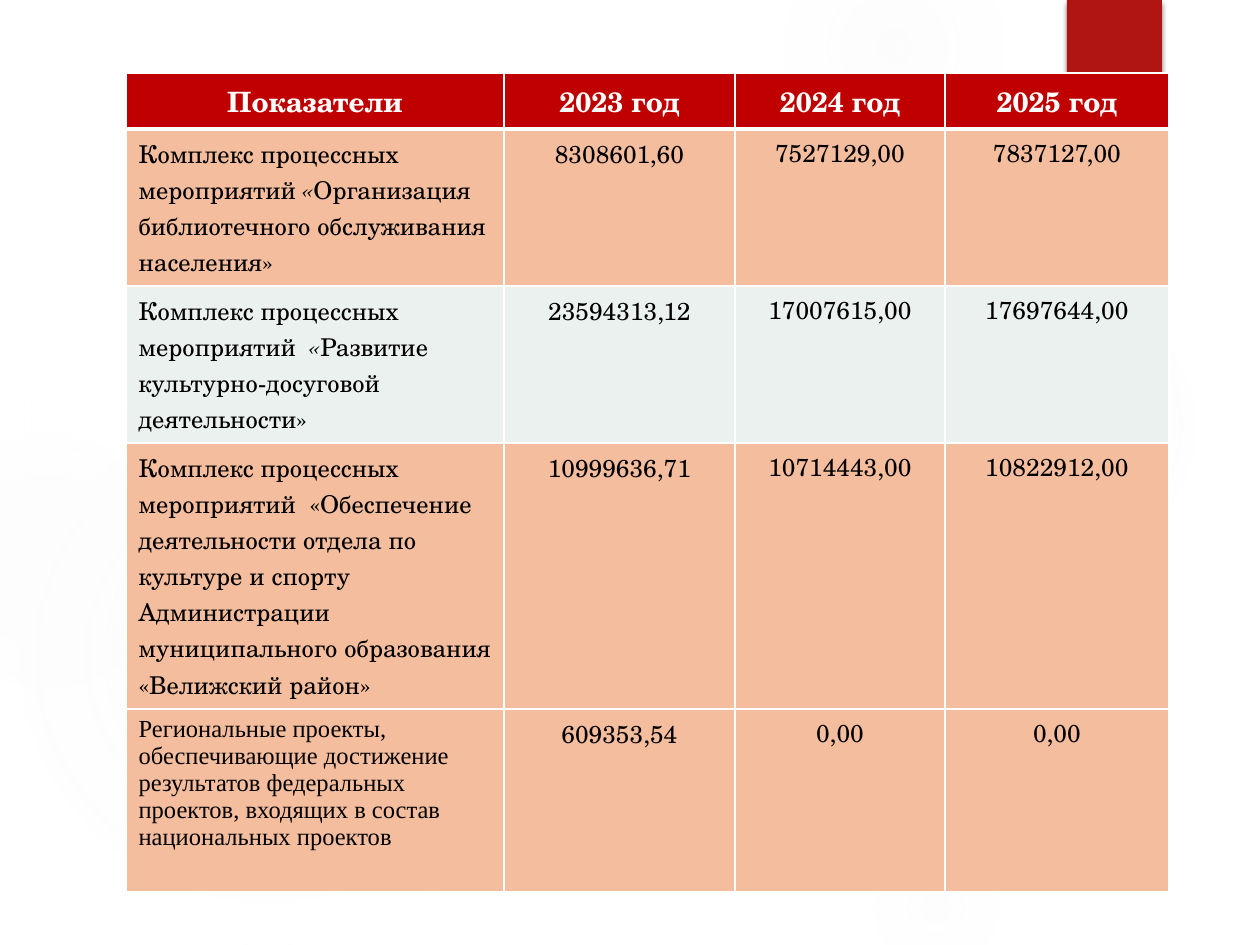
from lxml import etree
from pptx import Presentation
from pptx.dml.color import RGBColor
from pptx.enum.shapes import MSO_SHAPE
from pptx.enum.text import PP_ALIGN
from pptx.oxml import parse_xml
from pptx.oxml.ns import nsdecls, qn
from pptx.util import Pt

RECTANGLE, OVAL = MSO_SHAPE.RECTANGLE, MSO_SHAPE.OVAL
LEFT, CENTER = PP_ALIGN.LEFT, PP_ALIGN.CENTER

WHITE = RGBColor(0xFF, 0xFF, 0xFF)
BLACK = RGBColor(0x00, 0x00, 0x00)
GLOW = RGBColor(0xF3, 0xF3, 0xF3)
TAB_RED = RGBColor(0xB0, 0x15, 0x13)
HEADER_RED = RGBColor(0xC0, 0x00, 0x00)
PEACH = RGBColor(0xF4, 0xBD, 0x9E)
MINT = RGBColor(0xEB, 0xF1, 0xEE)

SCHOLA, TIMES = "TeX Gyre Schola", "Times New Roman"
PX_PER_INCH = 126

# Box (left, top, diameter) and gradient stops (position %, opacity %)
GLOWS = [
    ((868, 231, 388), [(0, 7), (36, 6), (69, 0)]),
    ((784, -63, 220), [(0, 14), (36, 7), (73, 0)]),
    ((868, 840, 136), [(0, 9), (36, 5), (66, 0)]),
    ((-21, 368, 577), [(0, 11), (36, 10), (75, 0)]),
    ((-116, 399, 325), [(0, 8), (36, 8), (72, 0)]),
]

COLUMN_WIDTHS = [378, 231, 210, 224]
ROW_HEIGHTS = [56, 157, 157, 266, 183]
HEADERS = ["Показатели", "2023 год", "2024 год", "2025 год"]
# Label runs (text, italic), label font, fill, amounts by year
ROWS = [
    ([("Комплекс процессных мероприятий", False), (" «", True),
      ("Организация библиотечного обслуживания населения»", False)],
     SCHOLA, PEACH, ["8308601,60", "7527129,00", "7837127,00"]),
    ([("Комплекс процессных мероприятий ", False), (" «", True),
      ("Развитие культурно-досуговой деятельности»", False)],
     SCHOLA, MINT, ["23594313,12", "17007615,00", "17697644,00"]),
    ([("Комплекс процессных мероприятий  «Обеспечение деятельности отдела "
       "по культуре и спорту Администрации муниципального образования "
       "«Велижский район»", False)],
     SCHOLA, PEACH, ["10999636,71", "10714443,00", "10822912,00"]),
    ([("Региональные проекты, обеспечивающие достижение результатов "
       "федеральных проектов, входящих в состав национальных проектов", False)],
     TIMES, PEACH, ["609353,54", "0,00", "0,00"]),
]


def px(length):
    return round(length * 914400 / PX_PER_INCH)


def add_plain_shape(slide, kind, left, top, width, height):
    shape = slide.shapes.add_shape(kind, px(left), px(top), px(width), px(height))
    shape.shadow.inherit = False
    shape.line.fill.background()
    return shape


def add_glow(slide, box, stops):
    """Circle that fades out from its centre."""
    left, top, diameter = box
    shape = add_plain_shape(slide, OVAL, left, top, diameter, diameter)
    stops_xml = "".join(
        f'<a:gs pos="{position * 1000}"><a:srgbClr val="{GLOW}">'
        f'<a:alpha val="{opacity * 1000}"/></a:srgbClr></a:gs>'
        for position, opacity in stops)
    gradient = parse_xml(
        f'<a:gradFill {nsdecls("a")}><a:gsLst>{stops_xml}</a:gsLst>'
        '<a:path path="circle"><a:fillToRect l="50000" t="50000" r="50000" '
        'b="50000"/></a:path></a:gradFill>')
    shape.element.spPr.find(qn("a:prstGeom")).addnext(gradient)


def add_red_tab(slide, left, top, width, height):
    shape = add_plain_shape(slide, RECTANGLE, left, top, width, height)
    shape.fill.solid()
    shape.fill.fore_color.rgb = TAB_RED
    effects = shape.element.spPr.find(qn("a:effectLst"))
    effects.append(parse_xml(
        f'<a:outerShdw {nsdecls("a")} blurRad="{Pt(3)}" dist="{Pt(2)}" '
        'dir="5400000" rotWithShape="0"><a:srgbClr val="000000">'
        '<a:alpha val="45000"/></a:srgbClr></a:outerShdw>'))


def set_borders(cell, bottom_width):
    properties = cell._tc.get_or_add_tcPr()
    widths = {"lnL": 1, "lnR": 1, "lnT": 1, "lnB": bottom_width}
    for index, (side, width) in enumerate(widths.items()):
        line = etree.Element(qn(f"a:{side}"), w=str(Pt(width)))
        fill = etree.SubElement(line, qn("a:solidFill"))
        etree.SubElement(fill, qn("a:srgbClr"), val=str(WHITE))
        properties.insert(index, line)


def fill_cell(cell, runs, fill, font=SCHOLA, align=CENTER, header=False):
    cell.fill.solid()
    cell.fill.fore_color.rgb = fill
    set_borders(cell, 3 if header else 1)
    paragraph = cell.text_frame.paragraphs[0]
    paragraph.alignment = align
    paragraph.font.name = font
    paragraph.font.size = Pt(16 if header else 14)
    paragraph.font.bold = header
    paragraph.font.color.rgb = WHITE if header else BLACK
    for text, italic in runs:
        run = paragraph.add_run()
        run.text = text
        if italic:
            run.font.italic = True


def tighten_cell(cell):
    """No margins and wider line spacing, as in the last two year columns."""
    cell.margin_left = cell.margin_right = 0
    cell.margin_top = cell.margin_bottom = 0
    cell.text_frame.paragraphs[0].line_spacing = 1.15


def add_budget_table(slide, left, top):
    table = slide.shapes.add_table(
        len(ROW_HEIGHTS), len(COLUMN_WIDTHS), px(left), px(top),
        px(sum(COLUMN_WIDTHS)), px(sum(ROW_HEIGHTS))).table
    for column, width in zip(table.columns, COLUMN_WIDTHS):
        column.width = px(width)
    for row, height in zip(table.rows, ROW_HEIGHTS):
        row.height = px(height)

    for column, header in enumerate(HEADERS):
        fill_cell(table.cell(0, column), [(header, False)], HEADER_RED, header=True)
    for row, (label, font, fill, amounts) in enumerate(ROWS, start=1):
        fill_cell(table.cell(row, 0), label, fill, font, LEFT)
        for column, amount in enumerate(amounts, start=1):
            cell = table.cell(row, column)
            fill_cell(cell, [(amount, False)], fill)
            if column > 1:
                tighten_cell(cell)


def main():
    presentation = Presentation()
    presentation.slide_width = px(1260)
    presentation.slide_height = px(945)
    slide = presentation.slides.add_slide(presentation.slide_layouts[6])

    # Background decoration
    for box, stops in GLOWS:
        add_glow(slide, box, stops)
    add_red_tab(slide, 1067, 0, 95, 151)

    # Budget by year
    add_budget_table(slide, 126, 73)

    presentation.save("out.pptx")


if __name__ == "__main__":
    main()
